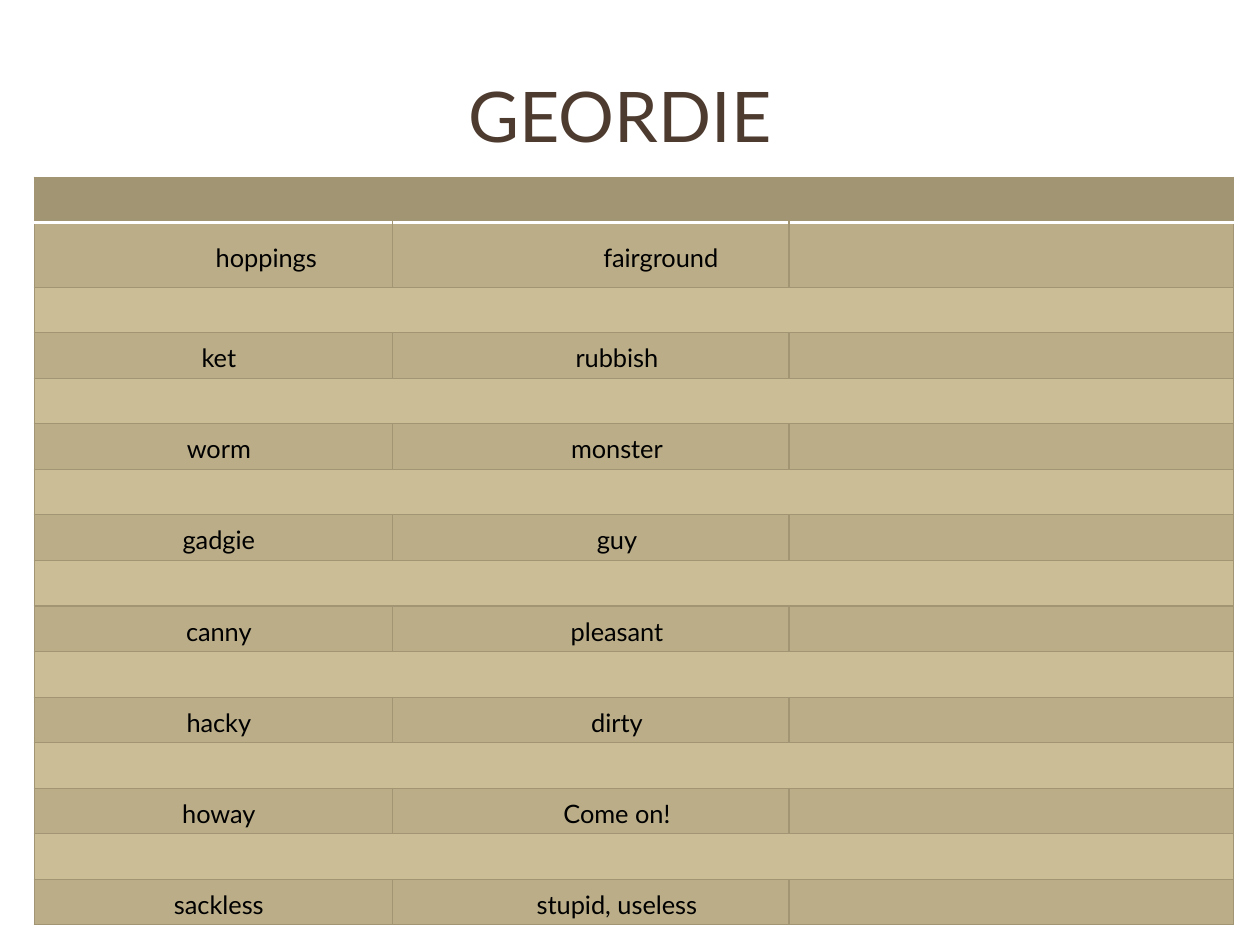
from dataclasses import dataclass

from lxml import etree
from pptx import Presentation
from pptx import util as u
from pptx.dml import color as c
from pptx.enum import text
from pptx.oxml import ns


@dataclass(frozen=True)
class Theme:
    font: str = "Lato"
    title_size: u.Length = u.Pt(44)
    word_size: u.Length = u.Pt(16)
    title_color: str = "4E3B30"
    word_color: str = "000000"
    header: str = "A19574"
    word_row: str = "BAAD88"
    gap_row: str = "CBBD95"
    border: str = "A19574"
    header_rule: str = "FFFFFF"
    border_width: u.Length = u.Pt(0.79)
    rule_width: u.Length = u.Pt(2)


@dataclass(frozen=True)
class Entry:
    dialect: str
    meaning: str
    dialect_indent: float = 0.25
    meaning_indent: float = 1.17


THEME = Theme()
ENTRIES = [
    Entry("hoppings", "fairground", 2.36, 3.12),
    Entry("ket", "rubbish"),
    Entry("worm", "monster"),
    Entry("gadgie", "guy"),
    Entry("canny", "pleasant"),
    Entry("hacky", "dirty"),
    Entry("howay", "Come on!"),
    Entry("sackless", "stupid, useless"),
]
COLUMN_WIDTHS = (7.96, 8.82, 9.88)
TABLE_HEIGHT = 16.63
FIRST_ENTRY_HEIGHT = 1.43


def style_paragraph(paragraph, size: u.Length, color: str) -> None:
    paragraph.font.name = THEME.font
    paragraph.font.size = size
    paragraph.font.color.rgb = c.RGBColor.from_string(color)


def add_border(cell, side: str, color: str, width: u.Length) -> None:
    properties = cell._tc.get_or_add_tcPr()
    line = etree.SubElement(properties, ns.qn(f"a:ln{side}"), w=str(int(width)))
    fill = etree.SubElement(line, ns.qn("a:solidFill"))
    etree.SubElement(fill, ns.qn("a:srgbClr"), val=color)


def style_cell(cell, row_index: int) -> None:
    rule_side = {0: "B", 1: "T"}.get(row_index)
    for side in "LRTB":
        if side == rule_side:
            add_border(cell, side, THEME.header_rule, THEME.rule_width)
        else:
            add_border(cell, side, THEME.border, THEME.border_width)
    if row_index == 0:
        color = THEME.header
    else:
        color = THEME.word_row if row_index % 2 else THEME.gap_row
    cell.fill.solid()
    cell.fill.fore_color.rgb = c.RGBColor.from_string(color)
    cell.margin_left = cell.margin_right = cell.margin_bottom = 0
    cell.margin_top = u.Cm(0.11)
    cell.vertical_anchor = text.MSO_ANCHOR.MIDDLE
    style_paragraph(cell.text_frame.paragraphs[0], THEME.word_size, THEME.word_color)


def write_word(cell, word: str, indent: float) -> None:
    cell.margin_left = u.Cm(indent)
    paragraph = cell.text_frame.paragraphs[0]
    paragraph.add_run().text = word
    paragraph.alignment = text.PP_ALIGN.CENTER
    paragraph.space_before = u.Pt(3.2)


def add_title(slide, title: str) -> None:
    shape = slide.shapes.add_textbox(u.Cm(10.42), u.Cm(1.59), u.Cm(7.24), u.Cm(1.93))
    frame = shape.text_frame
    frame.word_wrap = True
    frame.vertical_anchor = text.MSO_ANCHOR.MIDDLE
    frame.margin_left = frame.margin_right = frame.margin_top = frame.margin_bottom = 0
    paragraph = frame.paragraphs[0]
    paragraph.add_run().text = title
    style_paragraph(paragraph, THEME.title_size, THEME.title_color)


def add_glossary(slide, entries: list[Entry]) -> None:
    row_count = 2 * len(entries)
    table = slide.shapes.add_table(
        row_count, len(COLUMN_WIDTHS), u.Cm(0.76), u.Cm(3.94),
        u.Cm(sum(COLUMN_WIDTHS)), u.Cm(TABLE_HEIGHT),
    ).table
    table.first_row = False
    table.horz_banding = False
    for column, width in zip(table.columns, COLUMN_WIDTHS):
        column.width = u.Cm(width)
    row_height = (TABLE_HEIGHT - FIRST_ENTRY_HEIGHT) / (row_count - 1)
    for row_index, row in enumerate(table.rows):
        row.height = u.Cm(FIRST_ENTRY_HEIGHT if row_index == 1 else row_height)
        for cell in row.cells:
            style_cell(cell, row_index)
        if row_index % 2 == 0:
            table.cell(row_index, 0).merge(table.cell(row_index, len(COLUMN_WIDTHS) - 1))
        else:
            entry = entries[row_index // 2]
            write_word(table.cell(row_index, 0), entry.dialect, entry.dialect_indent)
            write_word(table.cell(row_index, 1), entry.meaning, entry.meaning_indent)


def main() -> None:
    presentation = Presentation()
    presentation.slide_width = u.Cm(28.01)
    presentation.slide_height = u.Cm(20.99)
    slide = presentation.slides.add_slide(presentation.slide_layouts[6])
    add_title(slide, "GEORDIE")
    add_glossary(slide, ENTRIES)
    presentation.save("out.pptx")


if __name__ == "__main__":
    main()
